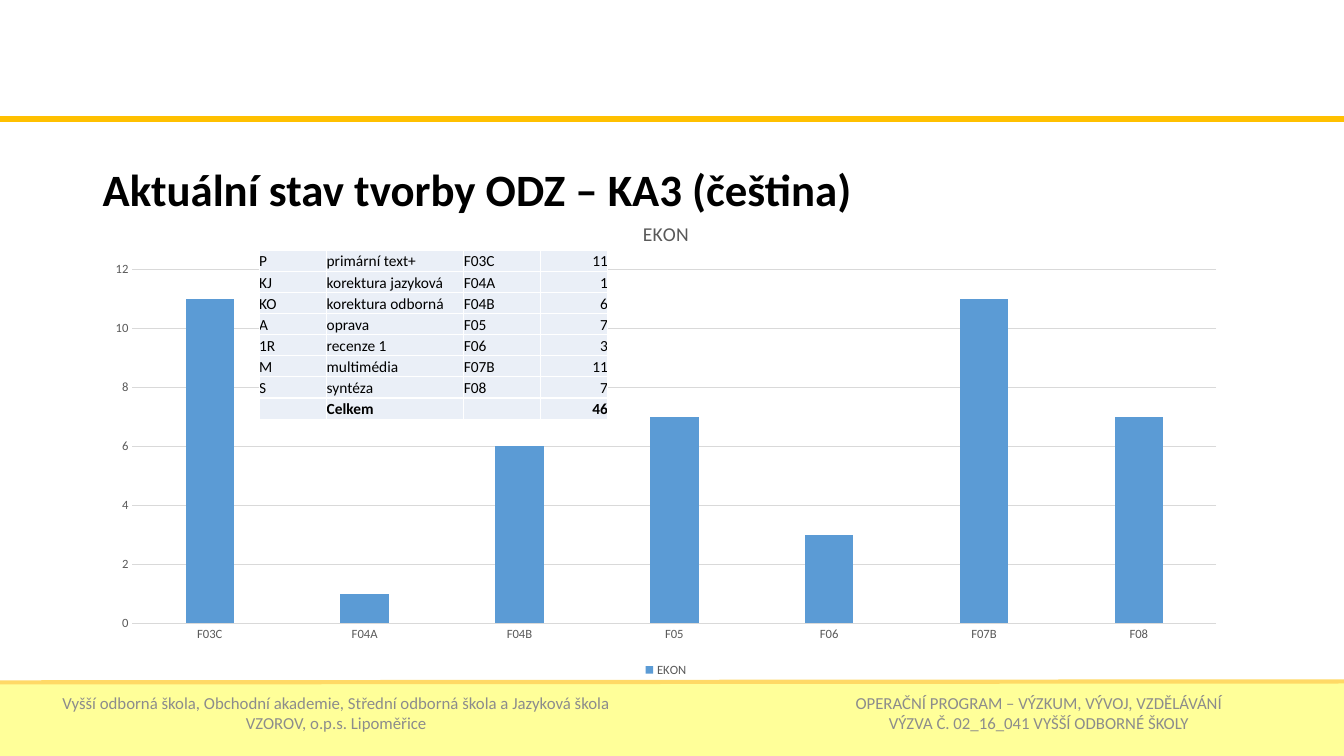
from lxml import etree
from pptx import Presentation
from pptx.chart.data import CategoryChartData
from pptx.dml.color import RGBColor
from pptx.enum.chart import XL_CHART_TYPE as ChartType, XL_LEGEND_POSITION as LegendPlace
from pptx.enum.chart import XL_TICK_MARK as Tick
from pptx.enum.shapes import MSO_CONNECTOR as Connector, MSO_SHAPE as Shape
from pptx.enum.text import MSO_ANCHOR as Anchor, PP_ALIGN as Align
from pptx.oxml.ns import qn
from pptx.util import Inches, Pt

# Content
TITLE = "Aktuální stav tvorby ODZ – KA3 (čeština)"
SERIES = "EKON"
STAGES = [
    ("P", "primární text+", "F03C", 11),
    ("KJ", "korektura jazyková", "F04A", 1),
    ("KO", "korektura odborná", "F04B", 6),
    ("A", "oprava", "F05", 7),
    ("1R", "recenze 1", "F06", 3),
    ("M", "multimédia", "F07B", 11),
    ("S", "syntéza", "F08", 7),
]
TOTAL = ("", "Celkem", "", sum(stage[3] for stage in STAGES))
SCHOOL = ["Vyšší odborná škola, Obchodní akademie, Střední odborná škola a Jazyková škola",
          "VZOROV, o.p.s. Lipoměřice"]
PROGRAMME = ["OPERAČNÍ PROGRAM – VÝZKUM, VÝVOJ, VZDĚLÁVÁNÍ",
             "VÝZVA Č. 02_16_041 VYŠŠÍ ODBORNÉ ŠKOLY"]

# Style and layout
FONT = "Calibri"
COLOURS = {"text": "000000", "footer": "8C8C8C", "axis": "595959", "grid": "D9D9D9",
           "bar": "5B9BD5", "cell": "EAEFF7", "border": "FFFFFF",
           "band": "FFFF99", "band_edge": "FFD966", "rule": "FFC000"}
WIDTH, HEIGHT = 13.33, 7.5
BAND_TOP, RULE_TOP = 6.77, 1.18
LEFT = 0.92
COLUMNS, ROW = (0.67, 1.36, 0.76, 0.67), 0.21


def colour(name):
    return RGBColor.from_string(COLOURS[name])


def set_font(font, size, name, bold=False):
    font.name, font.size, font.bold = FONT, Pt(size), bold
    font.color.rgb = colour(name)


def add_line(page, top, end, name, weight):
    line = page.shapes.add_connector(Connector.STRAIGHT, 0, Inches(top),
                                     Inches(WIDTH), Inches(end))
    line.line.color.rgb = colour(name)
    line.line.width = Pt(weight)
    etree.SubElement(line._element.spPr, qn("a:effectLst"))


def add_text(page, area, lines, size, name, align, bold=False, spacing=1.0):
    frame = page.shapes.add_textbox(*map(Inches, area)).text_frame
    frame.word_wrap = True
    frame.vertical_anchor = Anchor.MIDDLE
    frame.text = "\n".join(lines)
    for para in frame.paragraphs:
        para.alignment, para.line_spacing = align, spacing
        set_font(para.font, size, name, bold)


def add_chart(page):
    data = CategoryChartData()
    data.categories = [stage[2] for stage in STAGES]
    data.add_series(SERIES, [stage[3] for stage in STAGES])
    area = map(Inches, (LEFT, 2, 11.37, 4.76))
    chart = page.shapes.add_chart(ChartType.COLUMN_CLUSTERED, *area, data).chart
    set_font(chart.font, 10, "text")

    chart.has_title = True
    heading = chart.chart_title.text_frame
    heading.text = SERIES
    set_font(heading.paragraphs[0].font, 14, "axis")
    chart.has_legend = True
    chart.legend.position = LegendPlace.BOTTOM
    chart.legend.include_in_layout = False
    set_font(chart.legend.font, 9, "axis")

    plot = chart.plots[0]
    plot.gap_width, plot.overlap, plot.vary_by_categories = 219, -27, False
    bars = plot.series[0].format.fill
    bars.solid()
    bars.fore_color.rgb = colour("bar")

    categories, values = chart.category_axis, chart.value_axis
    for axis in (categories, values):
        axis.major_tick_mark = axis.minor_tick_mark = Tick.NONE
        set_font(axis.tick_labels.font, 9, "axis")
    values.minimum_scale, values.maximum_scale, values.major_unit = 0, 12, 2
    values.format.line.fill.background()
    for line in (categories.format.line, values.major_gridlines.format.line):
        line.color.rgb = colour("grid")
        line.width = Pt(0.75)


def style_cell(cell, value, bold):
    cell.text = str(value)
    cell.margin_left = cell.margin_right = cell.margin_top = cell.margin_bottom = 0
    cell.vertical_anchor = Anchor.BOTTOM
    para = cell.text_frame.paragraphs[0]
    para.alignment = Align.RIGHT if isinstance(value, int) else Align.LEFT
    set_font(para.font, 11, "text", bold)
    properties = cell._tc.get_or_add_tcPr()
    for side in ("lnL", "lnR", "lnT", "lnB"):
        border = etree.SubElement(properties, qn(f"a:{side}"), w=str(Pt(1)))
        fill = etree.SubElement(border, qn("a:solidFill"))
        etree.SubElement(fill, qn("a:srgbClr"), val=COLOURS["border"])
    cell.fill.solid()
    cell.fill.fore_color.rgb = colour("cell")


def add_stage_table(page):
    rows = STAGES + [TOTAL]
    area = map(Inches, (2.57, 2.48, sum(COLUMNS), ROW * len(rows)))
    table = page.shapes.add_table(len(rows), len(COLUMNS), *area).table
    table.first_row = table.horz_banding = False
    for column, width in zip(table.columns, COLUMNS):
        column.width = Inches(width)
    for row, values in zip(table.rows, rows):
        row.height = Inches(ROW)
        for cell, value in zip(row.cells, values):
            style_cell(cell, value, values is TOTAL)


def main():
    deck = Presentation()
    deck.slide_width, deck.slide_height = Inches(WIDTH), Inches(HEIGHT)
    page = deck.slides.add_slide(deck.slide_layouts[6])

    # Footer band and rules
    band = page.shapes.add_shape(Shape.RECTANGLE, 0, Inches(BAND_TOP),
                                 Inches(WIDTH), Inches(HEIGHT - BAND_TOP))
    band.shadow.inherit = False
    band.fill.solid()
    band.fill.fore_color.rgb = band.line.color.rgb = colour("band")
    band.line.width = Pt(1)
    add_line(page, BAND_TOP, BAND_TOP - 0.01, "band_edge", 3)
    add_line(page, RULE_TOP, RULE_TOP, "rule", 4.5)

    # Chart, texts and table
    add_chart(page)
    add_text(page, (LEFT, 1.24, 11.5, 1.33), [TITLE], 32, "text", Align.LEFT, True, 0.9)
    add_text(page, (0.15, 6.79, 6.37, 0.56), SCHOOL, 12, "footer", Align.CENTER)
    add_text(page, (7.54, 6.77, 5.53, 0.6), PROGRAMME, 12, "footer", Align.CENTER)
    add_stage_table(page)
    deck.save("out.pptx")


if __name__ == "__main__":
    main()
